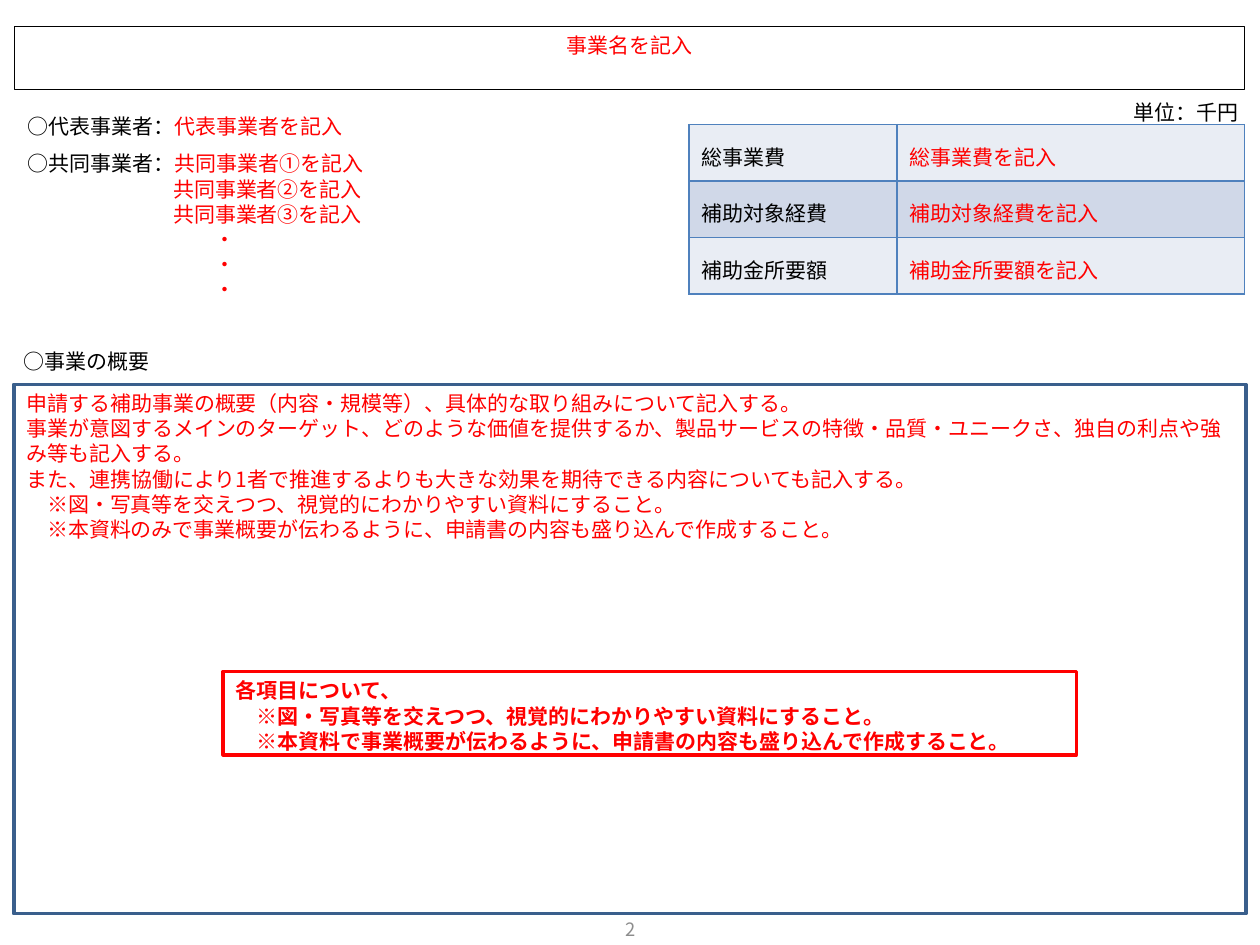
from dataclasses import dataclass

from lxml.etree import SubElement
from pptx import Presentation
from pptx.dml.color import RGBColor
from pptx.enum.shapes import MSO_SHAPE
from pptx.enum.text import MSO_ANCHOR, PP_ALIGN
from pptx.oxml.ns import qn
from pptx.util import Cm, Pt

FONT = "Noto Sans CJK JP"
COLOURS = {
    "label": "000000",
    "entry": "FF0000",
    "summary_line": "3A5F8C",
    "table_line": "4F81BD",
    "light_row": "E9EDF4",
    "dark_row": "D0D8E8",
    "page_number": "8C8C8C",
}
CHARACTER = 0.42  # width of one full-width 12 pt character, in cm


@dataclass
class Span:
    text: str
    colour: str = "entry"
    size: float = 12
    bold: bool = False


@dataclass
class Line:
    spans: list[Span]
    indent: int = 0  # in full-width characters
    centred: bool = False


@dataclass
class Block:
    left: float
    top: float
    width: float
    height: float
    lines: list[Line]
    outline: str | None = None
    weight: float = 2
    anchor: MSO_ANCHOR = MSO_ANCHOR.TOP


def entry(text: str, indent: int = 0, bold: bool = False) -> Line:
    return Line([Span(text, bold=bold)], indent)


def label(text: str, value: str = "") -> Line:
    spans = [Span(text, "label")]
    return Line(spans + [Span(value)] if value else spans)


def rgb(name: str) -> RGBColor:
    return RGBColor.from_string(COLOURS[name])


def write_lines(frame, lines: list[Line]) -> None:
    for index, line in enumerate(lines):
        paragraph = frame.add_paragraph() if index else frame.paragraphs[0]
        paragraph.alignment = PP_ALIGN.CENTER if line.centred else PP_ALIGN.LEFT
        if line.indent:
            properties = paragraph._p.get_or_add_pPr()
            properties.set("marL", str(Cm(line.indent * CHARACTER)))
            properties.set("indent", "0")
        for span in line.spans:
            run = paragraph.add_run()
            run.text = span.text
            run.font.size = Pt(span.size)
            run.font.bold = span.bold
            run.font.color.rgb = rgb(span.colour)
            run.font.name = FONT
            SubElement(run._r.get_or_add_rPr(), qn("a:ea"), typeface=FONT)


def draw_block(page, block: Block) -> None:
    place = [Cm(n) for n in (block.left, block.top, block.width, block.height)]
    if block.outline:
        box = page.shapes.add_shape(MSO_SHAPE.RECTANGLE, *place)
        box.shadow.inherit = False
        box.fill.background()
        box.line.color.rgb = rgb(block.outline)
        box.line.width = Pt(block.weight)
    else:
        box = page.shapes.add_textbox(*place)
    box.text_frame.word_wrap = True
    box.text_frame.vertical_anchor = block.anchor
    write_lines(box.text_frame, block.lines)


def add_borders(cell) -> None:
    """Border all four sides; must run before the cell is filled."""
    properties = cell._tc.get_or_add_tcPr()
    for side in ("lnL", "lnR", "lnT", "lnB"):
        border = SubElement(properties, qn(f"a:{side}"), w=str(Pt(1)))
        fill = SubElement(border, qn("a:solidFill"))
        SubElement(fill, qn("a:srgbClr"), val=COLOURS["table_line"])


def draw_costs(page, costs: list[str]) -> None:
    widths, row_height = (4.19, 7.01), 1.14
    table = page.shapes.add_table(
        len(costs), 2, Cm(13.89), Cm(2.51), Cm(sum(widths)), Cm(row_height * len(costs))
    ).table
    table.first_row = table.horz_banding = False
    for column, width in zip(table.columns, widths):
        column.width = Cm(width)
    for index, cost in enumerate(costs):
        table.rows[index].height = Cm(row_height)
        for column, line in enumerate((label(cost), entry(f"{cost}を記入"))):
            cell = table.cell(index, column)
            add_borders(cell)
            cell.fill.solid()
            cell.fill.fore_color.rgb = rgb("dark_row" if index % 2 else "light_row")
            cell.vertical_anchor = MSO_ANCHOR.MIDDLE
            cell.margin_bottom = 0
            write_lines(cell.text_frame, [line])


BLOCKS = [
    Block(0.3, 0.53, 24.79, 1.27, [Line([Span("事業名を記入")], centred=True)], "label", 0.75),
    Block(0.3, 2.16, 11.4, 0.76, [label("○代表事業者：", "代表事業者を記入")]),
    Block(22.61, 1.88, 2.79, 0.76, [label("単位：千円")]),
    Block(0.28, 7.75, 24.84, 10.67, [
        entry("申請する補助事業の概要（内容・規模等）、具体的な取り組みについて記入する。"),
        entry("事業が意図するメインのターゲット、どのような価値を提供するか、"
              "製品サービスの特徴・品質・ユニークさ、独自の利点や強み等も記入する。"),
        entry("また、連携協働により1者で推進するよりも大きな効果を期待できる内容についても記入する。"),
        entry("※図・写真等を交えつつ、視覚的にわかりやすい資料にすること。", 1),
        entry("※本資料のみで事業概要が伝わるように、申請書の内容も盛り込んで作成すること。", 1),
    ], "summary_line"),
    Block(0.3, 2.92, 11.4, 3.33, [
        label("○共同事業者：", "共同事業者①を記入"),
        *[entry(f"共同事業者{number}を記入", 7) for number in "②③"],
        *[entry("・", 9) for _ in range(3)],
    ]),
    Block(0.23, 6.91, 9.19, 0.76, [label("○事業の概要")]),
    Block(4.5, 13.54, 17.2, 1.68, [
        entry("各項目について、", bold=True),
        entry("※図・写真等を交えつつ、視覚的にわかりやすい資料にすること。", 1, True),
        entry("※本資料で事業概要が伝わるように、申請書の内容も盛り込んで作成すること。", 1, True),
    ], "entry"),
    Block(11.94, 18.42, 1.55, 0.61, [Line([Span("2", "page_number", 10.5)], centred=True)],
          anchor=MSO_ANCHOR.MIDDLE),
]


def main() -> None:
    deck = Presentation()
    deck.slide_width, deck.slide_height = Cm(25.4), Cm(19.05)
    page = deck.slides.add_slide(deck.slide_layouts[6])
    for block in BLOCKS:
        draw_block(page, block)
    draw_costs(page, ["総事業費", "補助対象経費", "補助金所要額"])
    deck.save("out.pptx")


if __name__ == "__main__":
    main()
